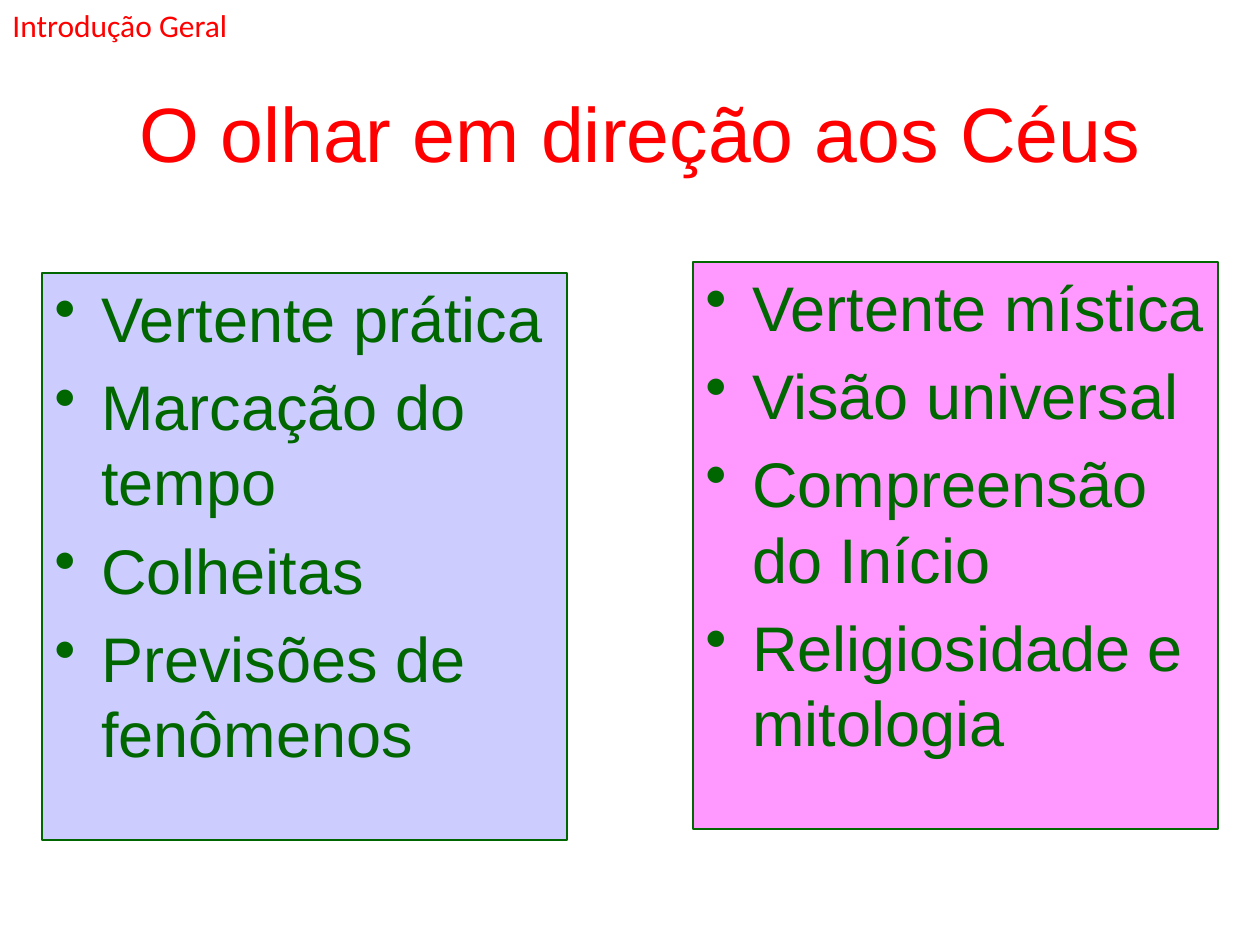
"""Builds the slide on the practical and mystical sides of looking at the sky."""
import pptx
import pptx.dml.color
import pptx.enum.shapes
import pptx.enum.text
import pptx.oxml.ns
import pptx.util
from lxml import etree

PX = 914400 / 126
GREEN, RED = "006600", "FF0000"


def px(*values):
    return [pptx.util.Emu(round(v * PX)) for v in values]


def style(font, name, size, color):
    font.name = name
    font.size = pptx.util.Pt(size)
    font.color.rgb = pptx.dml.color.RGBColor.from_string(color)


prs = pptx.Presentation()
prs.slide_width, prs.slide_height = px(1260, 945)
s = prs.slides.add_slide(prs.slide_layouts[6])

sp = s.shapes.add_textbox(*px(21, 32, 1239, 199))
tf = sp.text_frame
tf.word_wrap = True
tf.vertical_anchor = pptx.enum.text.MSO_ANCHOR.MIDDLE
p = tf.paragraphs[0]
p.text = "O olhar em direção aos Céus"
p.alignment = pptx.enum.text.PP_ALIGN.CENTER
style(p.font, "Arial", 44, RED)

panels = [
    (42, 273, "CCCCFF", ["Vertente prática", "Marcação do tempo",
                         "Colheitas", "Previsões de fenômenos"]),
    (693, 262, "FF99FF", ["Vertente mística", "Visão universal",
                          "Compreensão do Início", "Religiosidade e mitologia"]),
]
for left, top, fill, items in panels:
    sp = s.shapes.add_shape(pptx.enum.shapes.MSO_SHAPE.RECTANGLE,
                            *px(left, top, 525, 567))
    sp.shadow.inherit = False
    sp.fill.solid()
    sp.fill.fore_color.rgb = pptx.dml.color.RGBColor.from_string(fill)
    sp.line.color.rgb = pptx.dml.color.RGBColor.from_string(GREEN)
    sp.line.width = pptx.util.Pt(0.75)
    tf = sp.text_frame
    tf.word_wrap = True
    tf.vertical_anchor = pptx.enum.text.MSO_ANCHOR.TOP
    for i, item in enumerate(items):
        p = tf.add_paragraph() if i else tf.paragraphs[0]
        p.text = item
        p.alignment = pptx.enum.text.PP_ALIGN.LEFT
        p.space_before = pptx.util.Pt(7.2)
        style(p.font, "Arial", 36, GREEN)
        pPr = p._p.get_or_add_pPr()
        indent = px(47)[0]
        pPr.set("marL", str(indent))
        pPr.set("indent", str(-indent))
        bullet = etree.Element(pptx.oxml.ns.qn("a:buChar"), char="•")
        pPr.find(pptx.oxml.ns.qn("a:defRPr")).addprevious(bullet)

sp = s.shapes.add_textbox(*px(0, 0, 248, 50))
tf = sp.text_frame
tf.word_wrap = False
tf.auto_size = pptx.enum.text.MSO_AUTO_SIZE.SHAPE_TO_FIT_TEXT
p = tf.paragraphs[0]
p.text = "Introdução Geral"
style(p.font, "Calibri", 18, RED)

prs.save("out.pptx")
